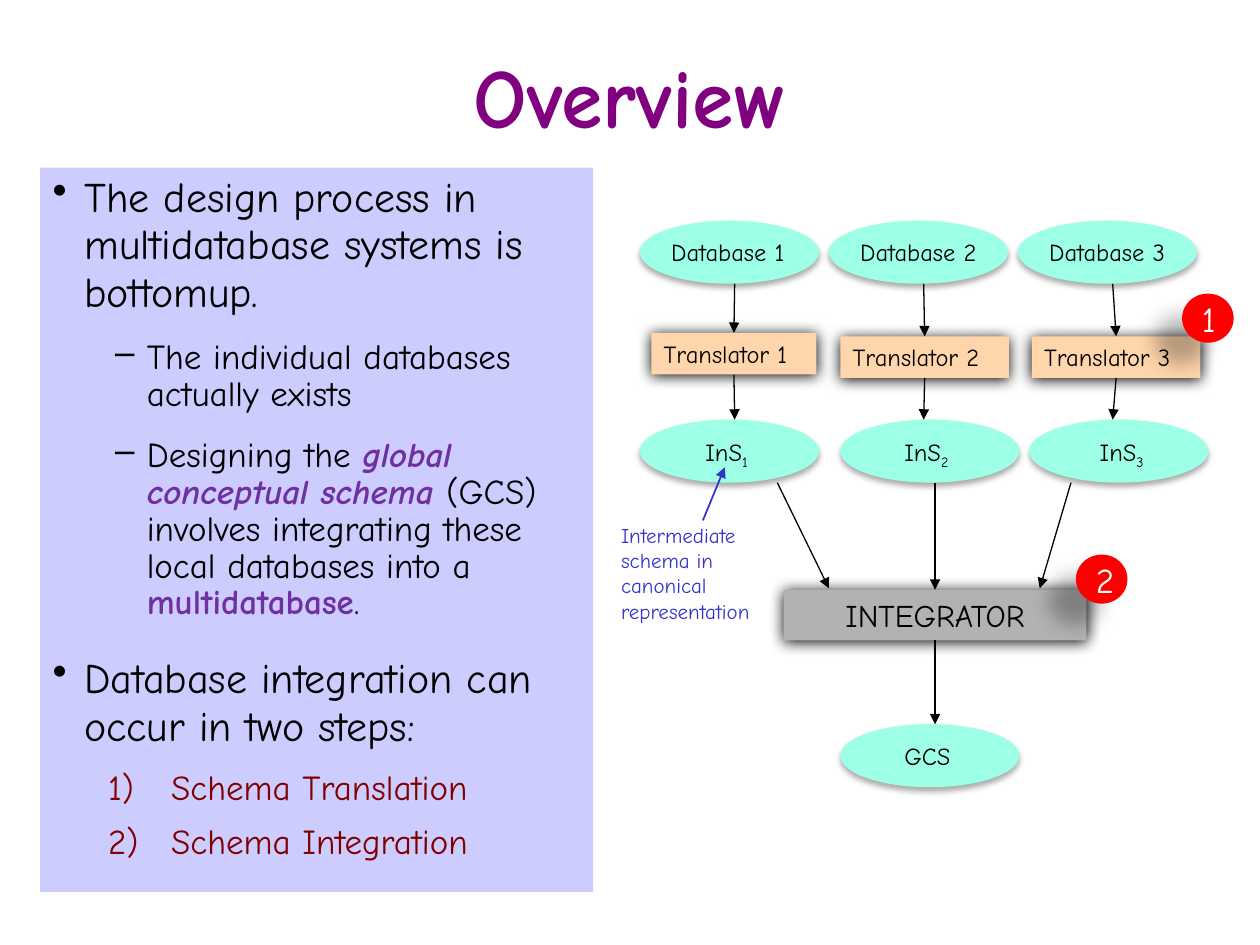
from lxml.etree import SubElement
from pptx import Presentation
from pptx.dml.color import RGBColor
from pptx.enum.shapes import MSO_CONNECTOR, MSO_SHAPE
from pptx.enum.text import MSO_ANCHOR, MSO_AUTO_SIZE, PP_ALIGN
from pptx.oxml.ns import qn
from pptx.util import Cm, Pt

FONT = "Comic Neue"
COLORS = {
    "title": "800080", "panel": "CCCCFF", "text": "000000", "term": "7030A0",
    "step": "800000", "schema": "9DFFE5", "translator": "FFD5AB",
    "integrator": "B2B2B2", "note": "3333CC", "badge": "FF0000", "white": "FFFFFF",
}
SOFT = (32, 3.5, 2.2, 90)
STRONG = (100, 8.5, 1, 90)
CAST = (28, 11.8, 19.7, 141)

prs = Presentation()
prs.slide_width, prs.slide_height = Cm(25.4), Cm(19.05)
slide = prs.slides.add_slide(prs.slide_layouts[5])


def add_filled(preset, left, top, width, height, color, shadow=None):
    shape = slide.shapes.add_shape(preset, Cm(left), Cm(top), Cm(width), Cm(height))
    shape.shadow.inherit = False
    shape.fill.solid()
    shape.fill.fore_color.rgb = RGBColor.from_string(COLORS[color])
    shape.line.fill.background()
    shape.text_frame.vertical_anchor = MSO_ANCHOR.TOP
    if shadow:
        alpha, blur, distance, angle = shadow
        effects = shape._element.spPr.find(qn("a:effectLst"))
        outer = SubElement(effects, qn("a:outerShdw"), blurRad=str(Pt(blur)),
                           dist=str(Pt(distance)), dir=str(angle * 60000),
                           algn="ctr", rotWithShape="0")
        tint = SubElement(outer, qn("a:srgbClr"), val=COLORS["text"])
        SubElement(tint, qn("a:alpha"), val=str(alpha * 1000))
    return shape


def add_run(paragraph, text, size, color="text", bold=False, italic=False):
    run = paragraph.add_run()
    run.text = text
    run.font.name, run.font.size = FONT, Pt(size)
    run.font.bold, run.font.italic = bold, italic
    run.font.color.rgb = RGBColor.from_string(COLORS[color])
    return run


title = slide.shapes.title
title.left, title.top, title.width, title.height = Cm(1.9), Cm(1.07), Cm(21.6), Cm(1.7)
title.text_frame.vertical_anchor = MSO_ANCHOR.MIDDLE
title.text_frame.paragraphs[0].alignment = PP_ALIGN.CENTER
add_run(title.text_frame.paragraphs[0], "Overview", 48, "title", bold=True)

LEVELS = {
    "point": (0, 0.64, -0.64, 24, 27, "•"),
    "detail": (1, 1.9, -0.64, 20, 21, "–"),
    "step": (1, 2.39, -1.27, 20, 27, None),
}
outline = [
    ("point", 10, [("The design process in multidatabase systems is bottomup.",)]),
    ("detail", 10, [("The individual databases actually exists",)]),
    ("detail", 14, [
        ("Designing the ",),
        ("global conceptual schema ", "term", True, True),
        ("(GCS) involves integrating these local databases into a ",),
        ("multidatabase", "term", True),
        (".",),
    ]),
    ("point", 2, [("Database integration can occur in two steps:",)]),
    ("step", 0, [("Schema Translation", "step")]),
    ("step", 0, [("Schema Integration", "step")]),
]
panel = add_filled(MSO_SHAPE.RECTANGLE, 0.81, 3.38, 11.15, 14.6, "panel").text_frame
panel.word_wrap = True
for index, (role, space_after, runs) in enumerate(outline):
    level, margin, indent, size, spacing, bullet = LEVELS[role]
    paragraph = panel.add_paragraph() if index else panel.paragraphs[0]
    paragraph.level = level
    paragraph.alignment = PP_ALIGN.LEFT
    paragraph.line_spacing = Pt(spacing)
    paragraph.space_before, paragraph.space_after = Pt(size * 0.2), Pt(space_after)
    properties = paragraph._p.get_or_add_pPr()
    properties.set("marL", str(Cm(margin)))
    properties.set("indent", str(Cm(indent)))
    if bullet:
        SubElement(properties, qn("a:buChar"), char=bullet)
    else:
        SubElement(properties, qn("a:buAutoNum"), type="arabicParenR")
    for text, *style in runs:
        add_run(paragraph, text, size, *style)

PITCH = 3.81
database_lefts = [12.9 + PITCH * i for i in range(3)]
flow_xs = [14.81 + PITCH * i for i in range(3)]
schema_lefts = [12.9, 16.94, 20.75]
ellipses = [(left, 4.45) for left in database_lefts]
ellipses += [(left, 8.46) for left in schema_lefts] + [(16.94, 14.6)]
for left, top in ellipses:
    add_filled(MSO_SHAPE.OVAL, left, top, 3.61, 1.27, "schema", SOFT)

translators = []
for number, (left, top, width) in enumerate(
        [(13.13, 6.71, 3.33), (16.94, 6.78, 3.4), (20.8, 6.78, 3.4)], 1):
    translator = add_filled(MSO_SHAPE.RECTANGLE, left, top, width, 0.84, "translator", STRONG)
    translator.text_frame.word_wrap = False
    translator.text_frame.auto_size = MSO_AUTO_SIZE.SHAPE_TO_FIT_TEXT
    translator.text_frame.paragraphs[0].alignment = PP_ALIGN.LEFT
    add_run(translator.text_frame.paragraphs[0], f"Translator {number}", 14)
    translators.append(translator)

integrator = add_filled(MSO_SHAPE.RECTANGLE, 15.8, 11.89, 6.1, 1.02, "integrator", STRONG)
integrator.text_frame.paragraphs[0].alignment = PP_ALIGN.CENTER
add_run(integrator.text_frame.paragraphs[0], "INTEGRATOR", 18)

labels = [(left + 0.38, 4.65, 3.1, 0.84, [f"Database {i}"], "", 14, "text")
          for i, left in enumerate(database_lefts, 1)]
labels += [(left, 8.69, 1.55, 0.84, ["InS"], str(i), 14, "text")
           for i, left in enumerate([13.97, 17.98, 21.92], 1)]
labels.append((17.98, 14.81, 1.5, 0.84, ["GCS"], "", 14, "text"))
labels.append((12.27, 10.41, 3.45, 2.29,
               ["Intermediate", "schema in", "canonical", "representation"], "", 12, "note"))
for left, top, width, height, lines, subscript, size, color in labels:
    label = slide.shapes.add_textbox(Cm(left), Cm(top), Cm(width), Cm(height)).text_frame
    label.word_wrap = False
    label.auto_size = MSO_AUTO_SIZE.SHAPE_TO_FIT_TEXT
    for index, line in enumerate(lines):
        paragraph = label.add_paragraph() if index else label.paragraphs[0]
        add_run(paragraph, line, size, color)
    if subscript:
        lowered = add_run(paragraph, subscript, size, color)
        lowered._r.get_or_add_rPr().set("baseline", "-25000")

arrows = []
for x, translator in zip(flow_xs, translators):
    arrows.append((x, 5.72, x, 6.71, None, (translator, 0), "text", 0.75))
    arrows.append((x, 7.62, x, 8.46, (translator, 2), None, "text", 0.75))
arrows += [
    (15.67, 9.73, 16.71, 11.86, None, None, "text", 0.75),
    (18.85, 9.73, 18.85, 11.86, None, (integrator, 0), "text", 0.75),
    (21.59, 9.73, 20.96, 11.86, None, None, "text", 0.75),
    (18.85, 12.9, 18.85, 14.6, (integrator, 2), None, "text", 0.75),
    (14.17, 10.49, 14.61, 9.42, None, None, "note", 1),
]
for x1, y1, x2, y2, source, target, color, weight in arrows:
    arrow = slide.shapes.add_connector(MSO_CONNECTOR.STRAIGHT, Cm(x1), Cm(y1), Cm(x2), Cm(y2))
    if source:
        arrow.begin_connect(*source)
    if target:
        arrow.end_connect(*target)
    arrow.line.width = Pt(weight)
    arrow.line.color.rgb = RGBColor.from_string(COLORS[color])
    SubElement(arrow.line._get_or_add_ln(), qn("a:tailEnd"), type="triangle")
    SubElement(arrow._element.spPr, qn("a:effectLst"))

for number, left, top in [("1", 23.83, 5.92), ("2", 21.69, 11.18)]:
    badge = add_filled(MSO_SHAPE.OVAL, left, top, 1.04, 0.99, "badge", CAST).text_frame
    badge.vertical_anchor = MSO_ANCHOR.MIDDLE
    badge.paragraphs[0].alignment = PP_ALIGN.RIGHT
    add_run(badge.paragraphs[0], number, 20, "white")

prs.save("out.pptx")
